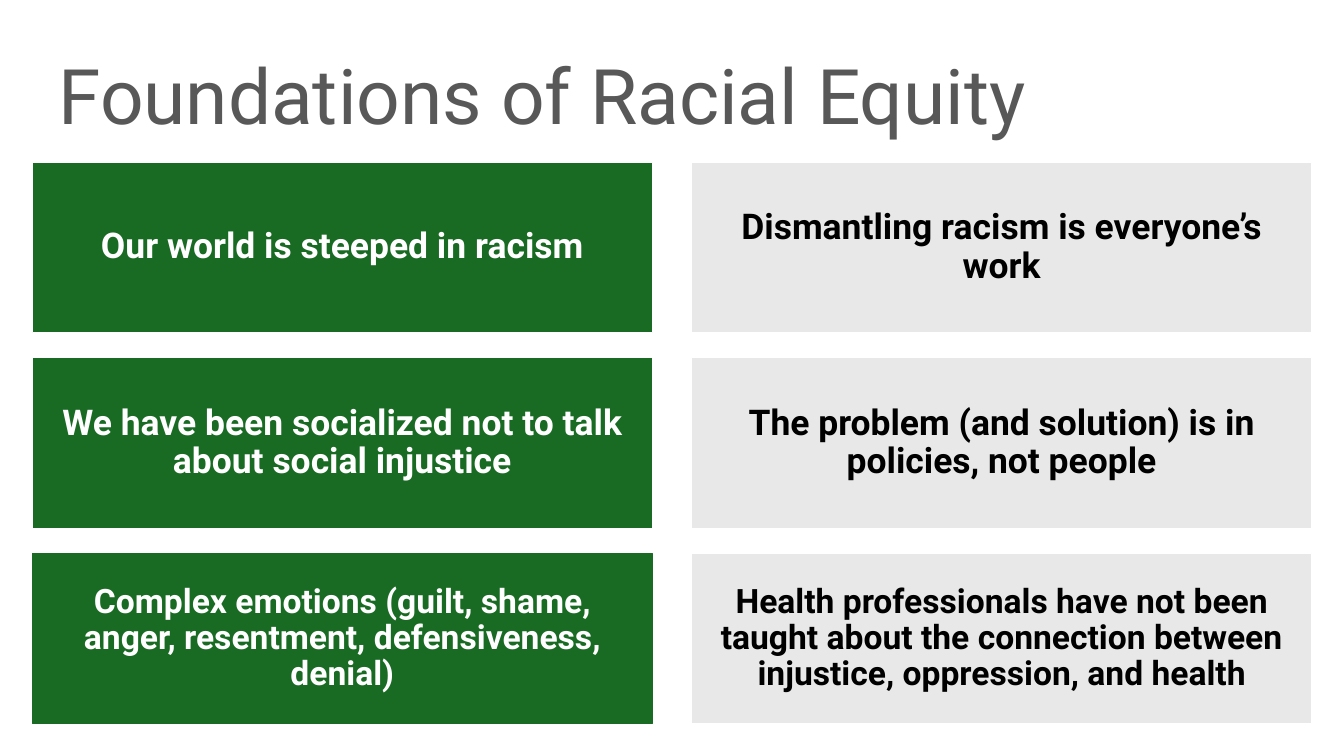
import pptx
import pptx.util
import pptx.dml.color
import pptx.enum.shapes
import pptx.enum.text

GREEN, GREY, WHITE, BLACK = "196B24", "E8E8E8", "FFFFFF", "000000"


def color(code):
    return pptx.dml.color.RGBColor.from_string(code)


class Deck:
    """Holds the style, the card grid and the current slide."""
    font = "Roboto"
    inset = 0.13
    left, top = 0.32, 1.61
    wide, high = 6.15, 1.69
    step_x, step_y = 6.54, 1.94

    def __init__(self):
        self.show = pptx.Presentation()
        self.show.slide_width = pptx.util.Inches(13.33)
        self.show.slide_height = pptx.util.Inches(7.5)
        self.slide = self.show.slides.add_slide(self.show.slide_layouts[6])

    def label(self, shape, text, size, ink, bold, align, anchor, space):
        frame = shape.text_frame
        frame.word_wrap = True
        frame.vertical_anchor = anchor
        edge = pptx.util.Inches(self.inset)
        frame.margin_left = frame.margin_right = edge
        frame.margin_top = frame.margin_bottom = edge
        frame.text = text
        para = frame.paragraphs[0]
        para.alignment = align
        para.line_spacing = space
        font = para.runs[0].font
        font.name, font.size, font.bold = self.font, pptx.util.Pt(size), bold
        font.color.rgb = color(ink)

    def title(self, text):
        box = self.slide.shapes.add_textbox(
            *map(pptx.util.Inches, (0.45, 0.35, 12.42, 0.98)))
        self.label(box, text, 54.7, "585858", False,
                   pptx.enum.text.PP_ALIGN.LEFT,
                   pptx.enum.text.MSO_ANCHOR.TOP, 1.0)

    def card(self, col, row, text, size, fill, ink, line):
        """Places a filled card at a column and row of the grid."""
        place = (self.left + col * self.step_x, self.top + row * self.step_y,
                 self.wide, self.high)
        box = self.slide.shapes.add_shape(
            pptx.enum.shapes.MSO_SHAPE.RECTANGLE,
            *map(pptx.util.Inches, place))
        box.shadow.inherit = False
        box.fill.solid()
        box.fill.fore_color.rgb = color(fill)
        box.line.color.rgb = color(line)
        box.line.width = pptx.util.Pt(0.75)
        self.label(box, text, size, ink, True,
                   pptx.enum.text.PP_ALIGN.CENTER,
                   pptx.enum.text.MSO_ANCHOR.MIDDLE, 0.9)


def main():
    deck = Deck()
    deck.title("Foundations of Racial Equity")
    looks = [(GREEN, WHITE), (GREY, BLACK)]
    sizes = [25.3, 25.3, 24]
    cards = [
        ["Our world is steeped in racism",
         "We have been socialized not to talk about social injustice",
         "Complex emotions (guilt, shame, anger, resentment, "
         "defensiveness, denial)"],
        ["Dismantling racism is everyone’s work",
         "The problem (and solution) is in policies, not people",
         "Health professionals have not been taught about the connection "
         "between injustice, oppression, and health"],
    ]
    for col, (texts, (fill, ink)) in enumerate(zip(cards, looks)):
        for row, (text, size) in enumerate(zip(texts, sizes)):
            line = GREEN if (col, row) == (0, 2) else WHITE
            deck.card(col, row, text, size, fill, ink, line)
    deck.show.save("out.pptx")


if __name__ == "__main__":
    main()
